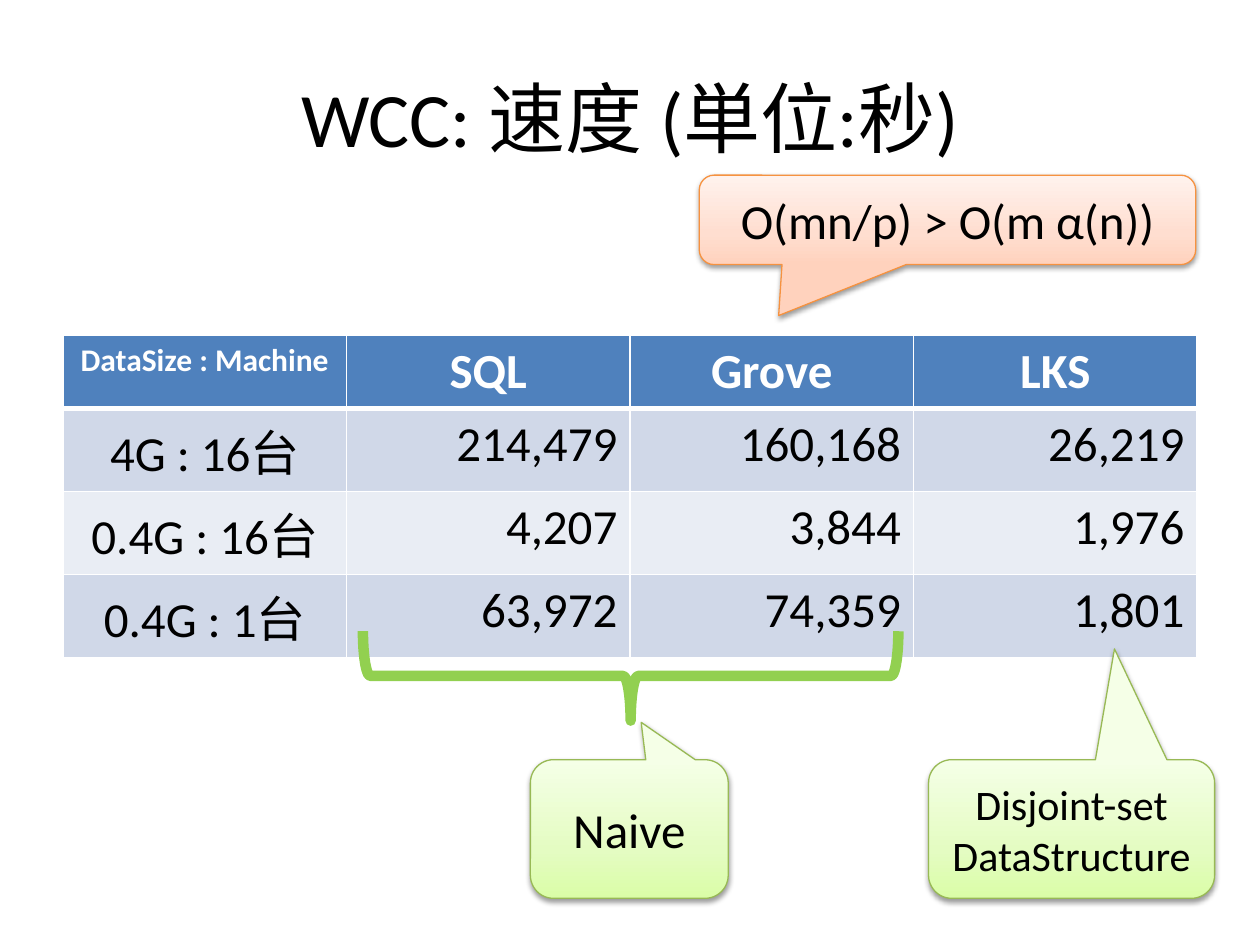
from typing import NamedTuple

from lxml.etree import SubElement
from pptx import Presentation
from pptx.dml.color import RGBColor
from pptx.enum.shapes import MSO_SHAPE as Shape
from pptx.enum.text import MSO_ANCHOR as Anchor, PP_ALIGN as Align
from pptx.oxml import parse_xml
from pptx.oxml.ns import nsdecls, qn
from pptx.util import Inches, Pt

BLACK = RGBColor(0, 0, 0)
WHITE = RGBColor(0xFF, 0xFF, 0xFF)
HEADER_BLUE = RGBColor(0x4F, 0x81, 0xBD)
BANDS = (RGBColor(0xD0, 0xD8, 0xE8), RGBColor(0xE9, 0xED, 0xF4))
BRACE_GREEN = RGBColor(0x92, 0xD0, 0x50)
GREEN_LINE = RGBColor(0x98, 0xB9, 0x55)
ORANGE_LINE = RGBColor(0xF6, 0x92, 0x40)
GREEN_STOPS = (RGBColor(0xDA, 0xFD, 0xA7), RGBColor(0xE4, 0xFC, 0xC2), RGBColor(0xF5, 0xFF, 0xE7))
ORANGE_STOPS = (RGBColor(0xFF, 0xD2, 0xBD), RGBColor(0xFF, 0xDE, 0xD0), RGBColor(0xFF, 0xF2, 0xED))
STOP_POSITIONS = (0, 35, 100)

TIMINGS = (
    ("DataSize : Machine", "SQL", "Grove", "LKS"),
    ("4G : 16台", "214,479", "160,168", "26,219"),
    ("0.4G : 16台", "4,207", "3,844", "1,976"),
    ("0.4G : 1台", "63,972", "74,359", "1,801"),
)
HEADER_HEIGHT, BODY_HEIGHT = 0.58, 0.66


class Box(NamedTuple):
    left: float
    top: float
    width: float
    height: float

    def lengths(self) -> list:
        return [Inches(value) for value in self]


class Callout(NamedTuple):
    text: str
    box: Box
    tip: tuple
    size: int
    stops: tuple
    line: RGBColor


CALLOUTS = (
    Callout("Disjoint-set\nDataStructure", Box(7.37, 6.03, 2.27, 1.1), (0.15, -1.3), 24,
            GREEN_STOPS, GREEN_LINE),
    Callout("Naive", Box(4.21, 6.03, 1.57, 1.1), (0.06, -0.77), 28, GREEN_STOPS, GREEN_LINE),
    Callout("O(mn/p) > O(m α(n))", Box(5.55, 1.39, 3.94, 0.71), (-0.34, 1.07), 28,
            ORANGE_STOPS, ORANGE_LINE),
)


def write(frame, text: str, align=Align.CENTER, **font_values) -> None:
    paragraph = frame.paragraphs[0]
    paragraph.text = text
    paragraph.alignment = align
    color = font_values.pop("color", BLACK)
    for run in paragraph.runs:
        for name, value in {"name": "Calibri", **font_values}.items():
            setattr(run.font, name, value)
        run.font.color.rgb = color


def add_title(slide) -> None:
    frame = slide.shapes.add_textbox(*Box(0.5, 0.3, 9, 1.25).lengths()).text_frame
    frame.word_wrap = True
    frame.vertical_anchor = Anchor.MIDDLE
    write(frame, "WCC: 速度 (単位:秒)", size=Pt(44))


def add_borders(cell, widths: dict) -> None:
    """Put white borders ahead of the cell fill, as the schema orders them."""
    properties = cell._tc.get_or_add_tcPr()
    for index, (side, width) in enumerate(widths.items()):
        properties.insert(index, parse_xml(
            f'<a:ln{side} {nsdecls("a")} w="{Pt(width)}"><a:solidFill>'
            f'<a:srgbClr val="{WHITE}"/></a:solidFill></a:ln{side}>'))


def add_timings(slide) -> None:
    height = HEADER_HEIGHT + BODY_HEIGHT * (len(TIMINGS) - 1)
    table = slide.shapes.add_table(len(TIMINGS), len(TIMINGS[0]),
                                   *Box(0.5, 2.66, 9, height).lengths()).table
    for r, values in enumerate(TIMINGS):
        header = r == 0
        table.rows[r].height = Inches(HEADER_HEIGHT if header else BODY_HEIGHT)
        for c, value in enumerate(values):
            cell = table.cell(r, c)
            cell.fill.solid()
            cell.fill.fore_color.rgb = HEADER_BLUE if header else BANDS[(r - 1) % 2]
            add_borders(cell, {"L": 1, "R": 1, "T": 3 if r == 1 else 1, "B": 3 if header else 1})
            write(cell.text_frame, value, Align.CENTER if header or c == 0 else Align.RIGHT,
                  size=Pt(18 if header and c == 0 else 28), bold=header,
                  color=WHITE if header else BLACK)


def fill_gradient(shape, colors: tuple) -> None:
    """Blend three colours from the bottom edge upwards."""
    shape.fill.gradient()
    shape.fill.gradient_angle = 90
    stops = shape._element.spPr.find(qn("a:gradFill")).find(qn("a:gsLst"))
    for stop in list(stops):
        stops.remove(stop)
    for position, color in zip(STOP_POSITIONS, colors):
        stop = SubElement(stops, qn("a:gs"), pos=str(position * 1000))
        SubElement(stop, qn("a:srgbClr"), val=str(color))


def add_soft_shadow(shape) -> None:
    shape.shadow.inherit = False
    effects = shape._element.spPr.find(qn("a:effectLst"))
    shadow = SubElement(effects, qn("a:outerShdw"), blurRad=str(Pt(3.1)), dist=str(Pt(1.6)),
                        dir="5400000", rotWithShape="0")
    color = SubElement(shadow, qn("a:srgbClr"), val=str(BLACK))
    SubElement(color, qn("a:alpha"), val="38000")


def add_callout(slide, callout: Callout) -> None:
    shape = slide.shapes.add_shape(Shape.ROUNDED_RECTANGULAR_CALLOUT, *callout.box.lengths())
    for index, offset in enumerate(callout.tip):
        shape.adjustments[index] = offset
    fill_gradient(shape, callout.stops)
    shape.line.color.rgb = callout.line
    shape.line.width = Pt(0.75)
    add_soft_shadow(shape)
    shape.text_frame.word_wrap = True
    shape.text_frame.vertical_anchor = Anchor.MIDDLE
    write(shape.text_frame, callout.text, size=Pt(callout.size))


def add_brace(slide) -> None:
    brace = slide.shapes.add_shape(Shape.RIGHT_BRACE, *Box(4.65, 3.24, 0.71, 4.25).lengths())
    brace.rotation = 90
    brace.fill.background()
    brace.line.color.rgb = BRACE_GREEN
    brace.line.width = Pt(6)
    brace.shadow.inherit = False


def main() -> None:
    deck = Presentation()
    deck.slide_width, deck.slide_height = Inches(10), Inches(7.5)
    slide = deck.slides.add_slide(deck.slide_layouts[6])
    add_title(slide)
    add_timings(slide)
    add_brace(slide)
    for callout in CALLOUTS:
        add_callout(slide, callout)
    deck.save("out.pptx")


if __name__ == "__main__":
    main()
